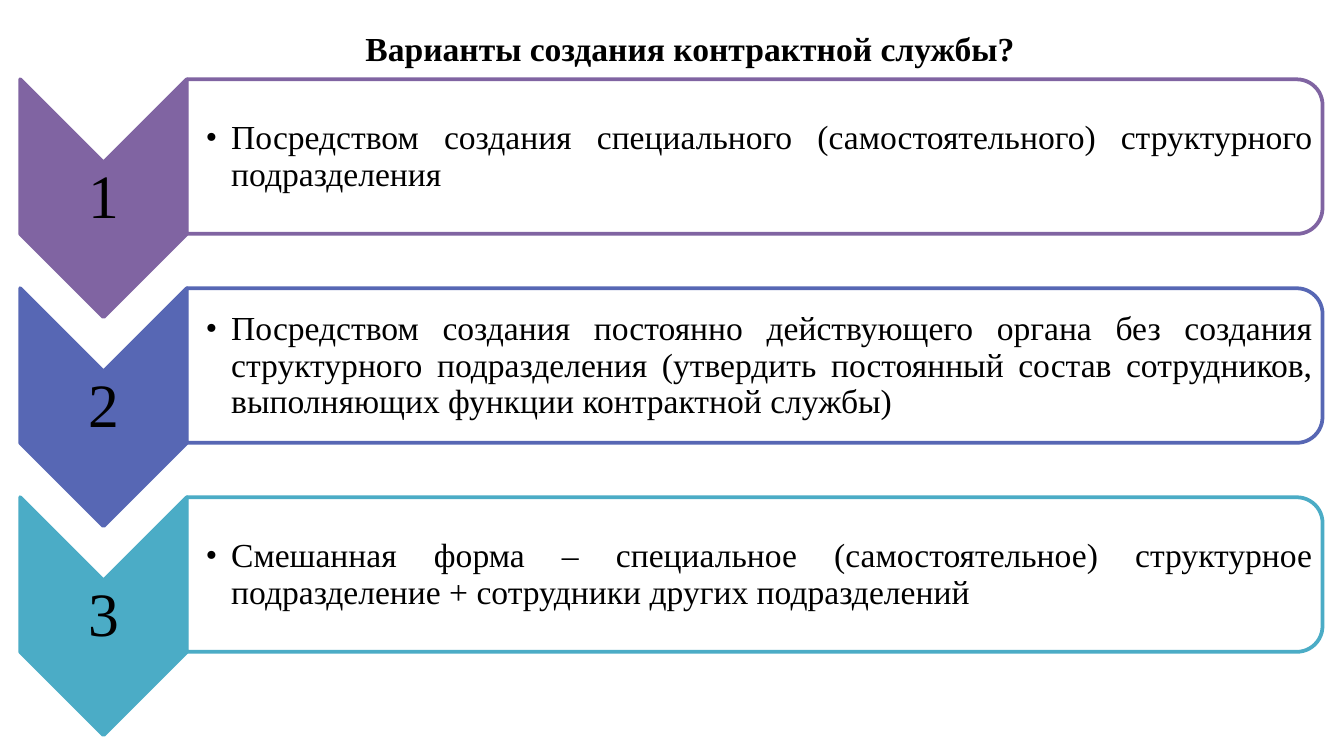
from lxml.etree import SubElement
from pptx import Presentation
from pptx.dml.color import RGBColor
from pptx.enum.shapes import MSO_SHAPE as Shape
from pptx.enum.text import MSO_ANCHOR as Anchor, PP_ALIGN as Align
from pptx.oxml.ns import qn
from pptx.util import Inches, Pt

COLORS = {"text": "000000", "card": "FFFFFF",
          "purple": "8064A2", "blue": "5767B4", "teal": "4BACC6"}
FONT = "Times New Roman"

# Grid: a chevron column, a card column and three equal rows
LEFT, TOP = 0.15, 0.59
CHEVRON_WIDTH, CHEVRON_HEIGHT = 1.24, 1.77
CARD_LEFT, CARD_WIDTH, CARD_HEIGHT = LEFT + CHEVRON_WIDTH, 8.45, 1.15
ROW_STEP = 3.11 / 2

OPTIONS = [
    ("purple", "Посредством создания специального (самостоятельного) "
               "структурного подразделения"),
    ("blue", "Посредством создания постоянно действующего органа без создания "
             "структурного подразделения (утвердить постоянный состав "
             "сотрудников, выполняющих функции контрактной службы)"),
    ("teal", "Смешанная форма – специальное (самостоятельное) структурное "
             "подразделение + сотрудники других подразделений"),
]

# Widescreen slide, 16:9
presentation = Presentation()
presentation.slide_width = Inches(10)
presentation.slide_height = Inches(10 * 9 / 16)
slide = presentation.slides.add_slide(presentation.slide_layouts[6])


def add_turned_shape(kind, left, top, width, height, fill, line):
    """Add a shape turned by 90 degrees that covers the given area."""
    shift = (width - height) / 2
    shape = slide.shapes.add_shape(kind, Inches(left + shift), Inches(top - shift),
                                   Inches(height), Inches(width))
    shape.rotation = 90
    shape.shadow.inherit = False
    shape.fill.solid()
    shape.fill.fore_color.rgb = RGBColor.from_string(COLORS[fill])
    shape.line.color.rgb = RGBColor.from_string(COLORS[line])
    shape.line.width = Pt(2)
    return shape


def add_text(text, left, top, width, height, size, align, margins, anchor=Anchor.MIDDLE):
    """Add a wrapped text box and return its paragraph."""
    box = slide.shapes.add_textbox(Inches(left), Inches(top), Inches(width), Inches(height))
    frame = box.text_frame
    frame.word_wrap = True
    frame.vertical_anchor = anchor
    frame.margin_left = Inches(margins[0])
    frame.margin_top = frame.margin_right = frame.margin_bottom = Inches(margins[1])
    paragraph = frame.paragraphs[0]
    paragraph.text = text
    paragraph.alignment = align
    paragraph.font.name = FONT
    paragraph.font.size = Pt(size)
    paragraph.font.color.rgb = RGBColor.from_string(COLORS["text"])
    return paragraph


# Title
title = add_text("Варианты создания контрактной службы?", 1.41, 0.16, 7.45, 0.4,
                 18, Align.CENTER, (0.05, 0.05), Anchor.TOP)
title.font.bold = True

for row, (color, text) in enumerate(OPTIONS):
    top = TOP + row * ROW_STEP

    # Numbered chevron pointing down
    add_turned_shape(Shape.CHEVRON, LEFT, top, CHEVRON_WIDTH, CHEVRON_HEIGHT, color, color)
    notch = CHEVRON_WIDTH / 2
    number = add_text(str(row + 1), LEFT, top + notch, CHEVRON_WIDTH,
                      CHEVRON_HEIGHT - 2 * notch, 33, Align.CENTER, (0.02, 0.02))
    number.line_spacing = 0.9

    # Card rounded on its right side, slightly see-through
    card = add_turned_shape(Shape.ROUND_2_SAME_RECTANGLE, CARD_LEFT, top,
                            CARD_WIDTH, CARD_HEIGHT, "card", color)
    card_color = card.fill._xPr.find(qn("a:solidFill"))[0]
    SubElement(card_color, qn("a:alpha"), val="90000")

    # Bulleted description
    description = add_text(text, CARD_LEFT, top + 0.06, CARD_WIDTH - 0.06,
                           CARD_HEIGHT - 0.11, 18, Align.JUSTIFY, (0.14, 0.01))
    description.level = 1
    description.line_spacing = 0.9
    properties = description._p.get_or_add_pPr()
    properties.set("marL", str(Inches(0.19)))
    properties.set("indent", str(-Inches(0.19)))
    run_defaults = properties.find(qn("a:defRPr"))
    for tag, attributes in (("a:buFont", {"typeface": FONT}), ("a:buChar", {"char": "•"})):
        run_defaults.addprevious(SubElement(properties, qn(tag), attributes))

presentation.save("out.pptx")
